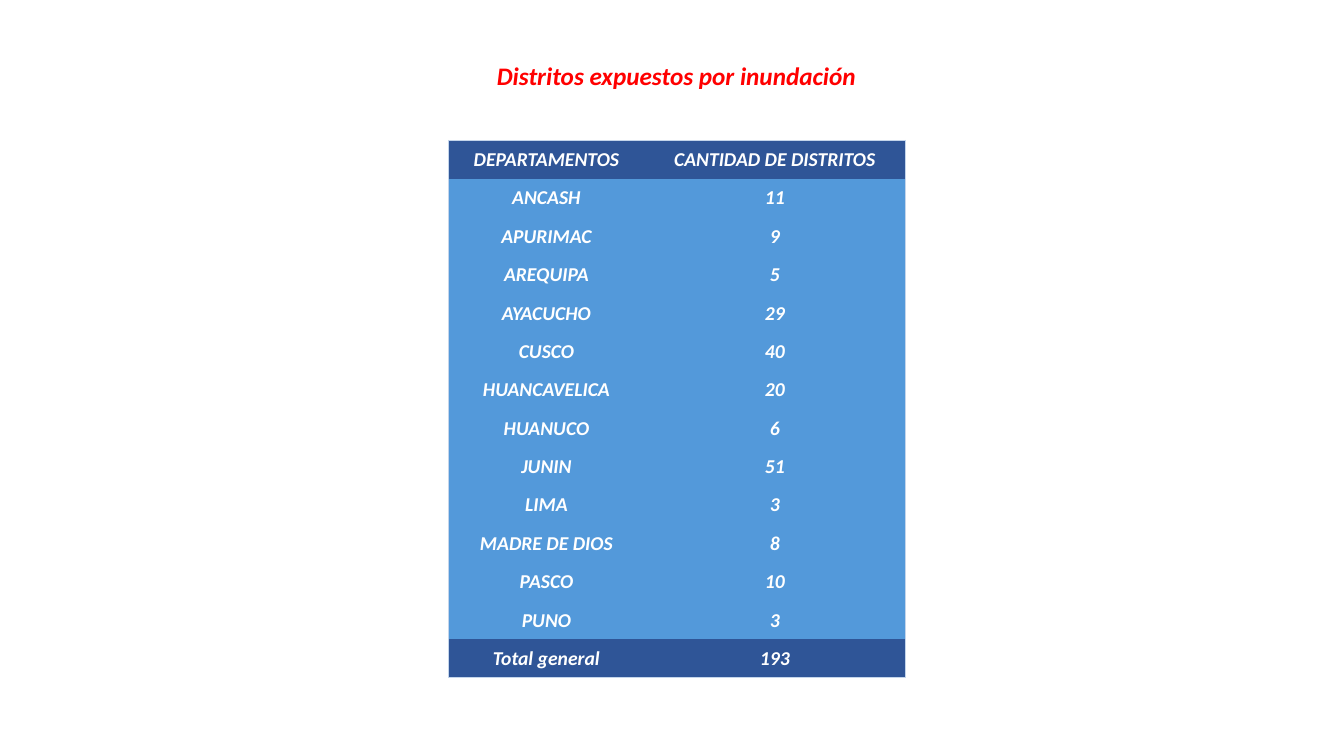
from typing import NamedTuple

from lxml.etree import SubElement
from pptx import Presentation
from pptx.dml.color import RGBColor
from pptx.enum.text import MSO_ANCHOR, MSO_AUTO_SIZE, PP_ALIGN
from pptx.oxml.ns import qn
from pptx.util import Inches, Pt

NAVY, BLUE, WHITE, RED, PALE = "2F5597", "5399DA", "FFFFFF", "FF0000", "C4D5EB"
NO_GRID_STYLE = "{2D5ABB26-0587-4C30-8999-92F81FD0307C}"
COLUMN_WIDTHS = (1.94, 2.59)
TABLE_HEIGHT = 5.33


class Row(NamedTuple):
    department: str
    districts: str
    fill: str = BLUE


ROWS = [
    Row("DEPARTAMENTOS", "CANTIDAD DE DISTRITOS", NAVY),
    Row("ANCASH", "11"),
    Row("APURIMAC", "9"),
    Row("AREQUIPA", "5"),
    Row("AYACUCHO", "29"),
    Row("CUSCO", "40"),
    Row("HUANCAVELICA", "20"),
    Row("HUANUCO", "6"),
    Row("JUNIN", "51"),
    Row("LIMA", "3"),
    Row("MADRE DE DIOS", "8"),
    Row("PASCO", "10"),
    Row("PUNO", "3"),
    Row("Total general", "193", NAVY),
]


def rgb(color: str) -> RGBColor:
    return RGBColor.from_string(color)


def write(tf, text: str, size: float, color: str) -> None:
    """Put one centred bold italic paragraph in a text frame."""
    p = tf.paragraphs[0]
    p.text = text
    p.alignment = PP_ALIGN.CENTER
    font = p.font
    font.name, font.size, font.bold, font.italic = "Calibri", Pt(size), True, True
    font.color.rgb = rgb(color)


def add_border(cell, side: str) -> None:
    """Draw one side (L, R, T or B) of a cell; call before filling it."""
    ln = SubElement(cell._tc.get_or_add_tcPr(), qn(f"a:ln{side}"), w=str(Pt(0.5)))
    SubElement(SubElement(ln, qn("a:solidFill")), qn("a:srgbClr"), val=PALE)


def add_title(slide) -> None:
    sp = slide.shapes.add_textbox(Inches(4.81), Inches(0.55), Inches(3.8), Inches(0.4))
    tf = sp.text_frame
    tf.word_wrap = False
    tf.auto_size = MSO_AUTO_SIZE.SHAPE_TO_FIT_TEXT
    write(tf, "Distritos expuestos por inundación", 18, RED)


def add_district_table(slide) -> None:
    table = slide.shapes.add_table(
        len(ROWS), len(COLUMN_WIDTHS), Inches(4.45), Inches(1.39),
        Inches(sum(COLUMN_WIDTHS)), Inches(TABLE_HEIGHT),
    ).table
    table.horz_banding = False
    table._tbl.tblPr.find(qn("a:tableStyleId")).text = NO_GRID_STYLE
    for column, width in zip(table.columns, COLUMN_WIDTHS):
        column.width = Inches(width)
    for i, row in enumerate(ROWS):
        table.rows[i].height = Inches(TABLE_HEIGHT / len(ROWS))
        for j, text in enumerate((row.department, row.districts)):
            cell = table.cell(i, j)
            cell.margin_left = cell.margin_right = cell.margin_top = Inches(0.01)
            cell.margin_bottom = 0
            cell.vertical_anchor = MSO_ANCHOR.MIDDLE
            add_border(cell, "LR"[j])
            if i == 0:
                add_border(cell, "T")
            if i == len(ROWS) - 1:
                add_border(cell, "B")
            cell.fill.solid()
            cell.fill.fore_color.rgb = rgb(row.fill)
            write(cell.text_frame, text, 14, WHITE)


def main() -> None:
    prs = Presentation()
    prs.slide_width, prs.slide_height = Inches(13.33), Inches(7.5)
    slide = prs.slides.add_slide(prs.slide_layouts[6])
    add_title(slide)
    add_district_table(slide)
    prs.save("out.pptx")


if __name__ == "__main__":
    main()
